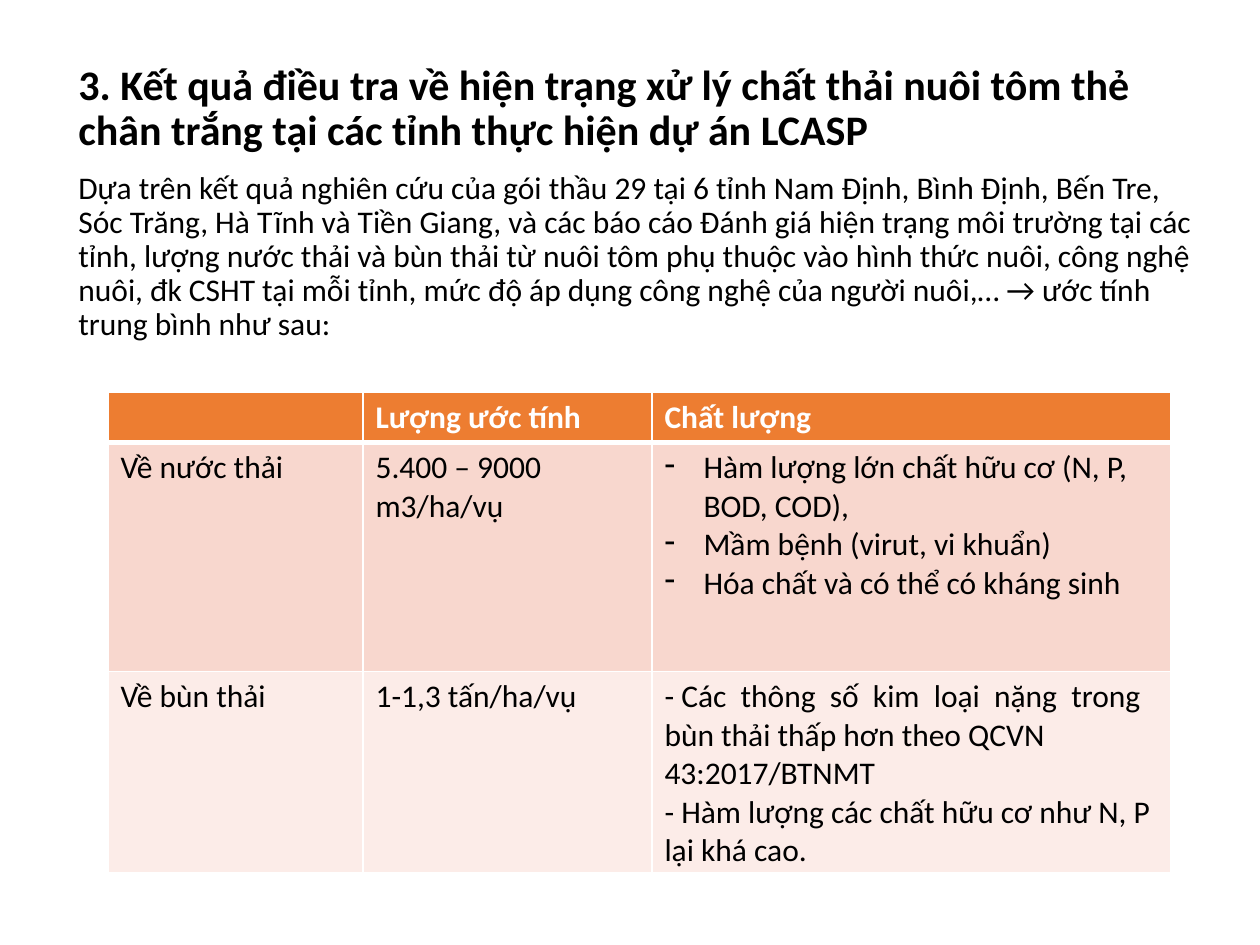
from dataclasses import dataclass

from lxml import etree
from pptx import Presentation
from pptx.dml.color import RGBColor
from pptx.enum.text import MSO_ANCHOR
from pptx.oxml.ns import qn
from pptx.util import Emu, Pt

TOP = MSO_ANCHOR.TOP
PX = 914400 // 126  # EMU in one px


@dataclass(frozen=True)
class Theme:
    font: str = "Calibri"
    heading_size: int = 24
    body_size: int = 18
    text: str = "000000"
    light: str = "FFFFFF"
    row_fills: tuple = ("ED7D31", "F8D7CE", "FCECE8")
    border: float = 1
    header_border: float = 3


THEME = Theme()

# Content
HEADING = ("3. Kết quả điều tra về hiện trạng xử lý chất thải nuôi tôm thẻ "
           "chân trắng tại các tỉnh thực hiện dự án LCASP")
INTRO = ("Dựa trên kết quả nghiên cứu của gói thầu 29 tại 6 tỉnh Nam Định, "
         "Bình Định, Bến Tre, Sóc Trăng, Hà Tĩnh và Tiền Giang, và các báo cáo "
         "Đánh giá hiện trạng môi trường tại các tỉnh, lượng nước thải và bùn "
         "thải từ nuôi tôm phụ thuộc vào hình thức nuôi, công nghệ nuôi, đk "
         "CSHT tại mỗi tỉnh, mức độ áp dụng công nghệ của người nuôi,… → ước "
         "tính trung bình như sau:")
# Each cell is a list of paragraphs
ROWS = [
    [[""], ["Lượng ước tính"], ["Chất lượng"]],
    [["Về nước thải"], ["5.400 – 9000 m3/ha/vụ"],
     ["Hàm lượng lớn chất hữu cơ (N, P, BOD, COD),",
      "Mầm bệnh (virut, vi khuẩn)",
      "Hóa chất và có thể có kháng sinh"]],
    [["Về bùn thải"], ["1-1,3 tấn/ha/vụ"],
     ["- Các  thông  số  kim  loại  nặng  trong  bùn thải thấp hơn theo QCVN "
      "43:2017/BTNMT",
      "- Hàm lượng các chất hữu cơ như N, P lại khá cao."]],
]
BULLETED_CELL = (1, 2)

# Layout in px
SLIDE_SIZE = (1260, 945)
TEXT_BOX = (66, 58, 1154, 398)
TABLE_ORIGIN = (108, 392)
COLUMN_WIDTHS = (255, 289, 519)
ROW_HEIGHTS = (49, 229, 193)
BULLET_INDENT = 39


def px(length):
    return Emu(length * PX)


def style(paragraph, size, color, bold):
    font = paragraph.font
    font.name, font.size, font.bold = THEME.font, Pt(size), bold
    font.color.rgb = RGBColor.from_string(color)


def add_dash_bullet(paragraph):
    properties = paragraph._p.get_or_add_pPr()
    properties.set("marL", str(px(BULLET_INDENT)))
    properties.set("indent", str(-px(BULLET_INDENT)))
    bullet = etree.Element(qn("a:buChar"), char="-")
    properties.insert_element_before(bullet, "a:tabLst", "a:defRPr", "a:extLst")


def set_borders(cell, widths):
    properties = cell._tc.get_or_add_tcPr()
    for position, (side, width) in enumerate(widths.items()):
        line = etree.Element(qn(f"a:{side}"), w=str(Pt(width)))
        fill = etree.SubElement(line, qn("a:solidFill"))
        etree.SubElement(fill, qn("a:srgbClr"), val=THEME.light)
        properties.insert(position, line)


def add_text(slide):
    frame = slide.shapes.add_textbox(*map(px, TEXT_BOX)).text_frame
    frame.word_wrap = True
    frame.vertical_anchor = TOP
    frame.text = f"{HEADING}\n{INTRO}"
    sizes = (THEME.heading_size, THEME.body_size)
    for paragraph, size, bold in zip(frame.paragraphs, sizes, (True, False)):
        paragraph.line_spacing = 0.9
        paragraph.space_before = Pt(10)
        style(paragraph, size, THEME.text, bold)


def fill_cell(cell, row, column):
    is_header = row == 0
    cell.fill.solid()
    cell.fill.fore_color.rgb = RGBColor.from_string(THEME.row_fills[row])
    cell.vertical_anchor = TOP
    set_borders(cell, {
        "lnL": THEME.border,
        "lnR": THEME.border,
        "lnT": THEME.header_border if row == 1 else THEME.border,
        "lnB": THEME.header_border if is_header else THEME.border,
    })
    cell.text_frame.text = "\n".join(ROWS[row][column])
    for paragraph in cell.text_frame.paragraphs:
        style(paragraph, THEME.body_size,
              THEME.light if is_header else THEME.text, is_header)
        if (row, column) == BULLETED_CELL:
            add_dash_bullet(paragraph)


def add_waste_table(slide):
    size = (sum(COLUMN_WIDTHS), sum(ROW_HEIGHTS))
    table = slide.shapes.add_table(len(ROWS), len(COLUMN_WIDTHS),
                                   *map(px, TABLE_ORIGIN + size)).table
    for column, width in zip(table.columns, COLUMN_WIDTHS):
        column.width = px(width)
    for row, height in enumerate(ROW_HEIGHTS):
        table.rows[row].height = px(height)
        for column in range(len(COLUMN_WIDTHS)):
            fill_cell(table.cell(row, column), row, column)


def main():
    presentation = Presentation()
    presentation.slide_width, presentation.slide_height = map(px, SLIDE_SIZE)
    slide = presentation.slides.add_slide(presentation.slide_layouts[6])
    add_text(slide)
    add_waste_table(slide)
    presentation.save("out.pptx")


if __name__ == "__main__":
    main()
